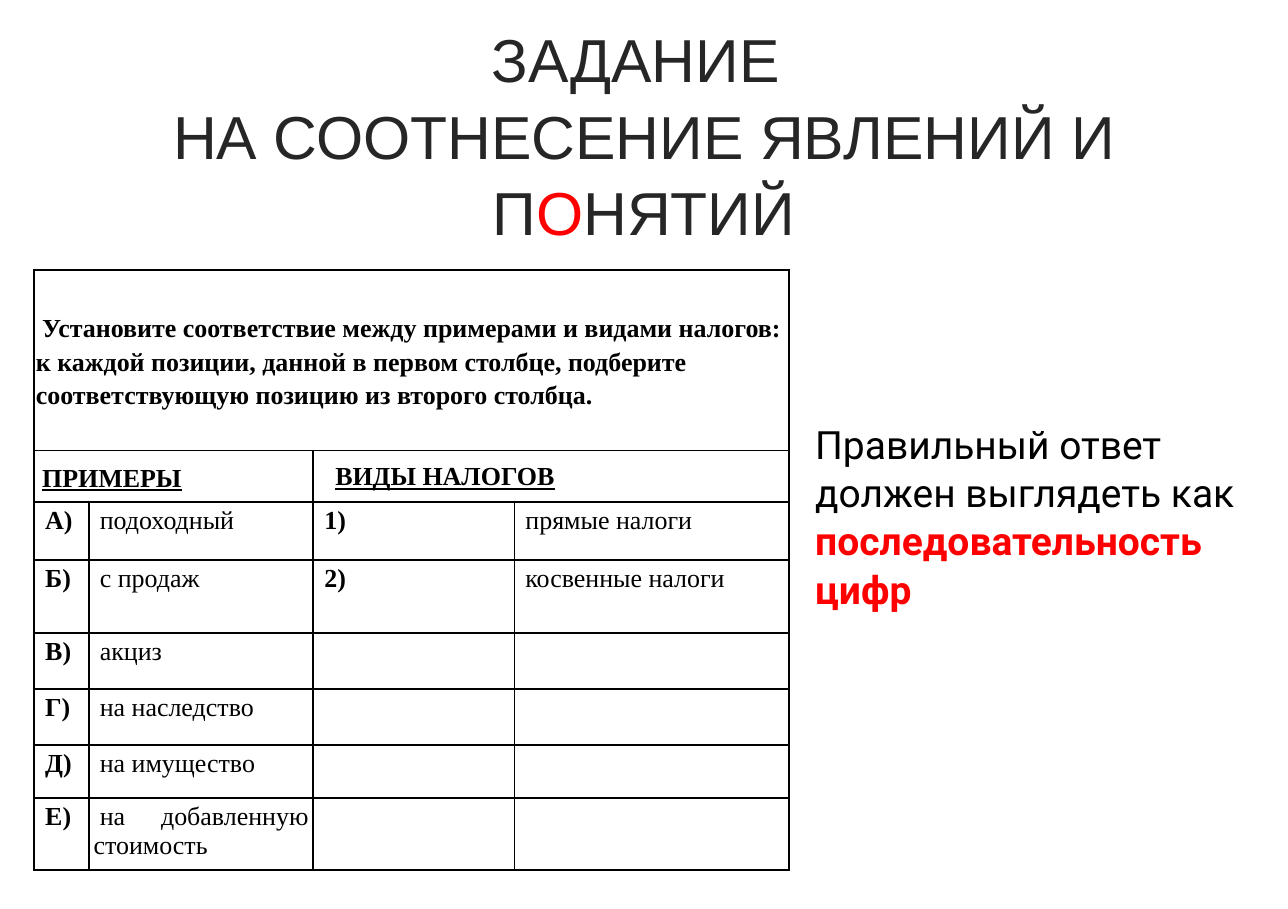
from dataclasses import dataclass

from lxml import etree
from pptx import Presentation
from pptx import util as u
from pptx.dml.color import RGBColor
from pptx.enum import text
from pptx.oxml import ns


@dataclass(frozen=True)
class Theme:
    title_color: RGBColor = RGBColor(0x26, 0x26, 0x26)
    ink: RGBColor = RGBColor(0, 0, 0)
    accent: RGBColor = RGBColor(0xFF, 0, 0)
    title_font: str = "Arial"
    note_font: str = "Roboto"
    table_font: str = "Times New Roman"
    title_size: float = 28
    note_size: float = 18
    table_size: float = 12
    border_width: float = 1


@dataclass(frozen=True)
class Span:
    content: str
    color: RGBColor
    bold: bool = False


@dataclass(frozen=True)
class TextBlock:
    left: float
    top: float
    width: float
    height: float
    font: str
    size: float
    line_spacing: float
    align: text.PP_ALIGN
    paragraphs: tuple[tuple[Span, ...], ...]


@dataclass(frozen=True)
class CellStyle:
    bold: bool = False
    underline: bool = False
    align: text.PP_ALIGN = text.PP_ALIGN.LEFT
    anchor: text.MSO_ANCHOR = text.MSO_ANCHOR.TOP
    inset: float = 0.03
    side_inset: float = 0.03
    line_spacing: float = 1.0


THEME = Theme()
MIDDLE = text.MSO_ANCHOR.MIDDLE
INTRO = CellStyle(bold=True, anchor=MIDDLE, inset=0.01, side_inset=0.01, line_spacing=1.15)
EXAMPLES_HEADING = CellStyle(True, True, anchor=MIDDLE, inset=0.01, side_inset=0.01, line_spacing=1.15)
KINDS_HEADING = CellStyle(True, True, inset=0.05, side_inset=0.1, line_spacing=1.15)
MARK = CellStyle(bold=True)
ENTRY = CellStyle(align=text.PP_ALIGN.JUSTIFY)
EMPTY = CellStyle(inset=0.01)

TITLE = TextBlock(
    0, 0.07, 8.26, 1.51, THEME.title_font, THEME.title_size, 1.05, text.PP_ALIGN.CENTER,
    (
        (Span("ЗАДАНИЕ ", THEME.title_color),),
        (
            Span("НА СООТНЕСЕНИЕ ЯВЛЕНИЙ И П", THEME.title_color),
            Span("О", THEME.accent),
            Span("НЯТИЙ", THEME.title_color),
        ),
    ),
)
ANSWER_NOTE = TextBlock(
    5.13, 2.64, 3.13, 1.31, THEME.note_font, THEME.note_size, 1.03, text.PP_ALIGN.LEFT,
    (
        (
            Span("Правильный ответ должен выглядеть как ", THEME.ink),
            Span("последовательность цифр", THEME.accent, True),
        ),
    ),
)

COLUMN_WIDTHS = (0.35, 1.44, 1.29, 1.76)
ROW_HEIGHTS = (1.16, 0.33, 0.37, 0.47, 0.36, 0.36, 0.34, 0.46)
TASK = (
    "Установите соответствие между примерами и видами налогов: к каждой позиции, "
    "данной в первом столбце, подберите соответствующую позицию из второго столбца."
)
TAX_ROWS = (
    ("А)", "подоходный", "1)", "прямые налоги"),
    ("Б)", "с продаж", "2)", "косвенные налоги"),
    ("В)", "акциз", "", ""),
    ("Г)", "на наследство", "", ""),
    ("Д)", "на имущество", "", ""),
    ("Е)", "на добавленную стоимость", "", ""),
)


def add_text(slide, block: TextBlock) -> None:
    shape = slide.shapes.add_textbox(
        *(u.Inches(value) for value in (block.left, block.top, block.width, block.height))
    )
    frame = shape.text_frame
    frame.word_wrap = True
    frame.auto_size = text.MSO_AUTO_SIZE.SHAPE_TO_FIT_TEXT
    for index, spans in enumerate(block.paragraphs):
        paragraph = frame.add_paragraph() if index else frame.paragraphs[0]
        paragraph.alignment = block.align
        paragraph.line_spacing = block.line_spacing
        paragraph.font.name = block.font
        paragraph.font.size = u.Pt(block.size)
        for span in spans:
            run = paragraph.add_run()
            run.text = span.content
            run.font.color.rgb = span.color
            run.font.bold = span.bold


def add_borders(cell) -> None:
    properties = cell._tc.get_or_add_tcPr()
    for position, side in enumerate(("lnL", "lnR", "lnT", "lnB")):
        line = etree.Element(ns.qn(f"a:{side}"), w=str(u.Pt(THEME.border_width)))
        fill = etree.SubElement(line, ns.qn("a:solidFill"))
        etree.SubElement(fill, ns.qn("a:srgbClr"), val=str(THEME.ink))
        properties.insert(position, line)


def fill_cell(cell, content: str, style: CellStyle) -> None:
    cell.margin_left = cell.margin_right = u.Inches(style.side_inset)
    cell.margin_top = cell.margin_bottom = u.Inches(style.inset)
    cell.vertical_anchor = style.anchor
    paragraph = cell.text_frame.paragraphs[0]
    paragraph.text = content
    paragraph.alignment = style.align
    paragraph.line_spacing = style.line_spacing
    font = paragraph.font
    font.name = THEME.table_font
    font.size = u.Pt(THEME.table_size)
    font.color.rgb = THEME.ink
    font.bold = style.bold
    font.underline = style.underline
    # First-line indent
    properties = paragraph._p.get_or_add_pPr()
    properties.set("marL", "0")
    properties.set("indent", str(u.Inches(0.04)))


def add_tax_table(slide) -> None:
    table = slide.shapes.add_table(
        len(ROW_HEIGHTS), len(COLUMN_WIDTHS), u.Inches(0.22), u.Inches(1.73),
        u.Inches(sum(COLUMN_WIDTHS)), u.Inches(sum(ROW_HEIGHTS)),
    ).table
    table.first_row = table.horz_banding = False
    for column, width in zip(table.columns, COLUMN_WIDTHS):
        column.width = u.Inches(width)
    for row, height in zip(table.rows, ROW_HEIGHTS):
        row.height = u.Inches(height)
    for cell in table.iter_cells():
        cell.fill.background()
        add_borders(cell)

    # Task and column headings
    table.cell(0, 0).merge(table.cell(0, 3))
    fill_cell(table.cell(0, 0), TASK, INTRO)
    headings = ((0, "ПРИМЕРЫ", EXAMPLES_HEADING), (2, "ВИДЫ НАЛОГОВ", KINDS_HEADING))
    for column, heading, style in headings:
        table.cell(1, column).merge(table.cell(1, column + 1))
        fill_cell(table.cell(1, column), heading, style)

    # Examples and kinds of taxes
    for row, contents in enumerate(TAX_ROWS, start=2):
        for column, content in enumerate(contents):
            style = (ENTRY if column % 2 else MARK) if content else EMPTY
            fill_cell(table.cell(row, column), content, style)


def main() -> None:
    presentation = Presentation()
    presentation.slide_width = u.Inches(8.26)
    presentation.slide_height = u.Inches(5.83)
    slide = presentation.slides.add_slide(presentation.slide_layouts[6])
    add_text(slide, TITLE)
    add_text(slide, ANSWER_NOTE)
    add_tax_table(slide)
    presentation.save("out.pptx")


if __name__ == "__main__":
    main()
